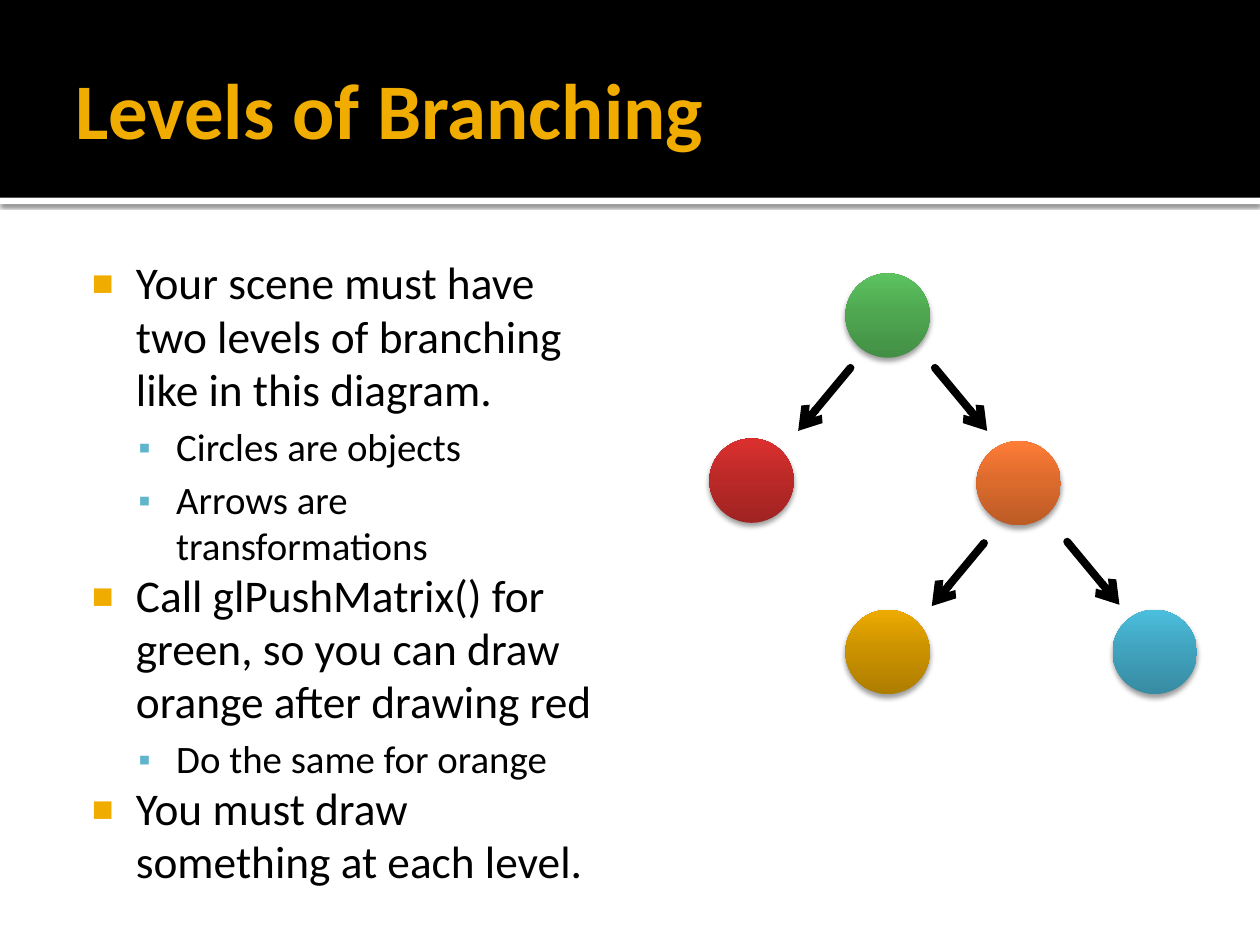
from copy import deepcopy

from lxml import etree
from pptx import Presentation
from pptx import util as u
from pptx.dml.color import RGBColor
from pptx.enum import shapes, text
from pptx.oxml.ns import qn

COLORS = {
    "black": "000000", "white": "FFFFFF", "gold": "F0AD00", "sky": "60B5CC",
    "green": ("438F45", "4FA851", "5CC35F"),
    "orange": ("BC5B26", "DD6B2D", "FF7D37"),
    "red": ("A02322", "BC2A28", "DC302F"),
    "yellow": ("AE7D00", "CC9300", "EEAB00"),
    "blue": ("378BA2", "41A4BF", "4BBFDE"),
}
FONT = "Calibri"

deck = Presentation()
deck.slide_width, deck.slide_height = u.Inches(10), u.Inches(7.5)
slide = deck.slides.add_slide(deck.slide_layouts[6])
col, row = deck.slide_width / 100, deck.slide_height / 100


def add_block(preset, left, top, width, height, shadow=None):
    block = slide.shapes.add_shape(
        preset, int(left * col), int(top * row), int(width * col), int(height * row))
    block.line.fill.background()
    block.shadow.inherit = False
    if shadow:
        alpha, blur, distance = shadow
        effects = block._element.spPr.find(qn("a:effectLst"))
        outer = etree.SubElement(
            effects, qn("a:outerShdw"), blurRad=str(u.Pt(blur)), dist=str(u.Pt(distance)),
            dir="5400000", algn="t", rotWithShape="0")
        tint = etree.SubElement(outer, qn("a:srgbClr"), val=COLORS["black"])
        etree.SubElement(tint, qn("a:alpha"), val=str(alpha * 1000))
    return block


def add_words(left, top, width, height, insets):
    frame = slide.shapes.add_textbox(
        int(left * col), int(top * row), int(width * col), int(height * row)).text_frame
    frame.word_wrap = True
    frame.margin_left, frame.margin_top, frame.margin_right, frame.margin_bottom = (
        u.Inches(inset) for inset in insets)
    return frame


rectangle = shapes.MSO_SHAPE.RECTANGLE
for top, height, color, shadow in ((20.93, 0.67, "white", (60, 2.5, 0.8)),
                                   (0, 20.93, "black", None)):
    band = add_block(rectangle, 0, top, 100, height, shadow)
    band.fill.solid()
    band.fill.fore_color.rgb = RGBColor.from_string(COLORS[color])

title = add_words(5, 2.27, 90, 18.27, (0.1, 0.05, 0.05, 0.05))
title.vertical_anchor = text.MSO_ANCHOR.MIDDLE
title.text = "Levels of Branching"
heading = title.paragraphs[0].runs[0].font
heading.name, heading.size, heading.bold = FONT, u.Pt(45), True
heading.color.rgb = RGBColor.from_string(COLORS["gold"])

LEVELS = (
    {"size": 25.9, "margin": 0.48, "hang": -0.35, "before": 0,
     "mark": "■", "color": "gold", "scale": 80},
    {"size": 22.2, "margin": 0.8, "hang": -0.3, "before": 4.4,
     "mark": "▪", "color": "sky", "scale": 90},
)
POINTS = (
    (0, "Your scene must have two levels of branching like in this diagram."),
    (1, "Circles are objects"),
    (1, "Arrows are transformations"),
    (0, "Call glPushMatrix() for green, so you can draw orange after drawing red"),
    (1, "Do the same for orange"),
    (0, "You must draw something at each level."),
)
body = add_words(5, 25.87, 44.2, 67.47, (0.1, 0.1, 0.1, 0.05))
body.text = "\n".join(words for _, words in POINTS)
for point, (depth, _) in zip(body.paragraphs, POINTS):
    style = LEVELS[depth]
    point.level = depth
    point.line_spacing = 0.98
    point.space_before = u.Pt(style["before"])
    font = point.runs[0].font
    font.name, font.size = FONT, u.Pt(style["size"])
    font.color.rgb = RGBColor.from_string(COLORS["black"])
    props = point._p.get_or_add_pPr()
    props.set("marL", str(u.Inches(style["margin"])))
    props.set("indent", str(u.Inches(style["hang"])))
    bullet_color = etree.SubElement(props, qn("a:buClr"))
    etree.SubElement(bullet_color, qn("a:srgbClr"), val=COLORS[style["color"]])
    etree.SubElement(props, qn("a:buSzPct"), val=str(style["scale"] * 1000))
    etree.SubElement(props, qn("a:buFont"), typeface="Arial")
    etree.SubElement(props, qn("a:buChar"), char=style["mark"])

NODES = (("green", 67.1, 28.93), ("orange", 77.5, 46.67), ("red", 56.3, 46.4),
         ("yellow", 67.1, 64.53), ("blue", 88.3, 64.53))
for color, left, top in NODES:
    node = add_block(shapes.MSO_SHAPE.OVAL, left, top, 6.7, 8.93, (38, 3.1, 2))
    node.fill.gradient()
    node.fill.gradient_angle = 90
    stops = node._element.spPr.find(".//" + qn("a:gsLst"))
    stops.insert(1, deepcopy(stops[0]))
    for stop, position, shade in zip(node.fill.gradient_stops, (0, 0.55, 1), COLORS[color]):
        stop.position = position
        stop.color.rgb = RGBColor.from_string(shade)

ARROWS = ((67.5, 38.93, -1), (74.2, 38.93, 1), (84.7, 57.33, 1), (78.1, 57.47, -1))
for left, top, side in ARROWS:
    arrow = slide.shapes.add_connector(
        shapes.MSO_CONNECTOR.STRAIGHT, int(left * col), int(top * row),
        int((left + side * 4.15) * col), int((top + 6.67) * row))
    arrow.line.width = u.Pt(4.5)
    arrow.line.color.rgb = RGBColor.from_string(COLORS["black"])
    stroke = arrow.line._get_or_add_ln()
    stroke.set("cap", "rnd")
    etree.SubElement(stroke, qn("a:tailEnd"), type="arrow")
    etree.SubElement(arrow._element.spPr, qn("a:effectLst"))

deck.save("out.pptx")
